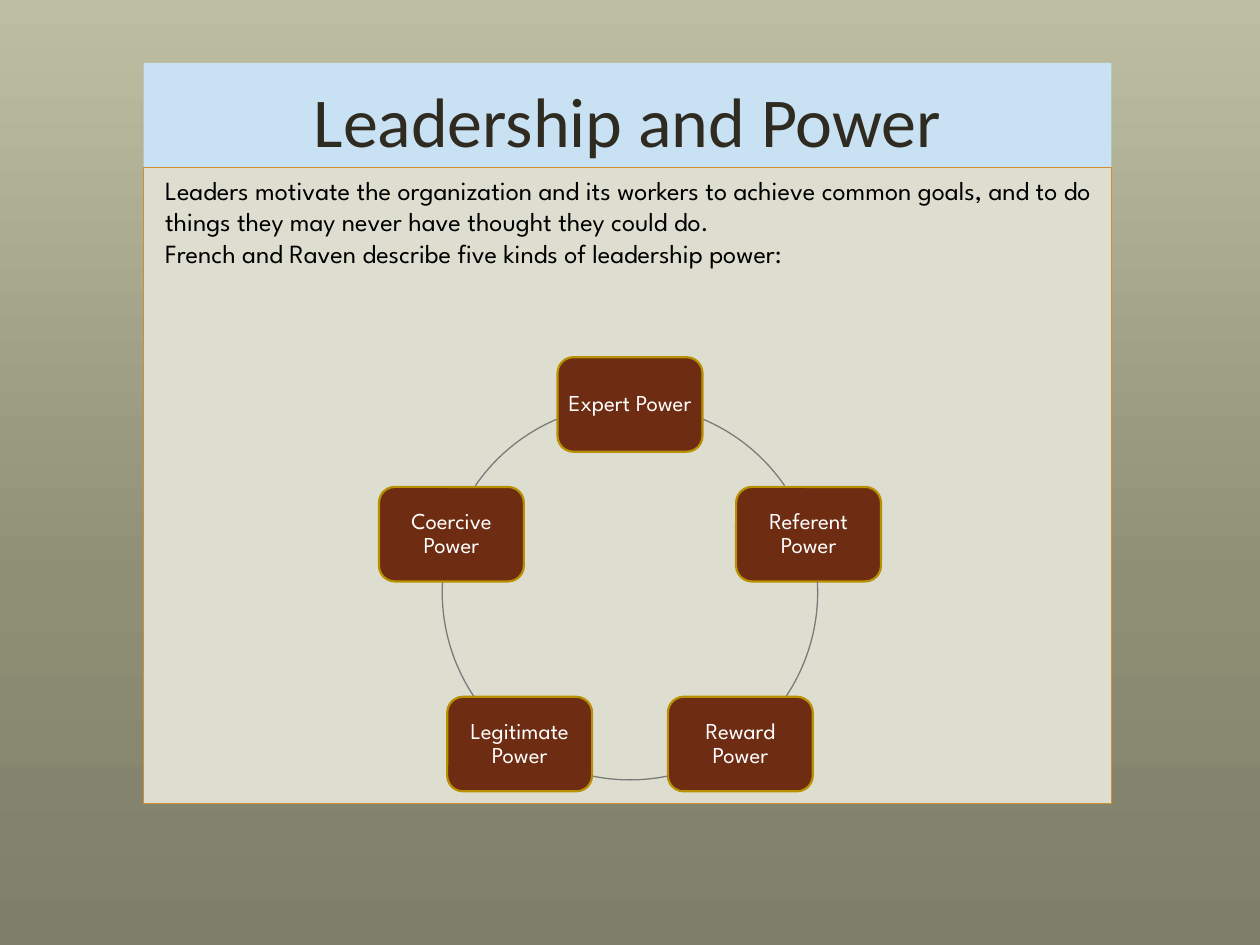
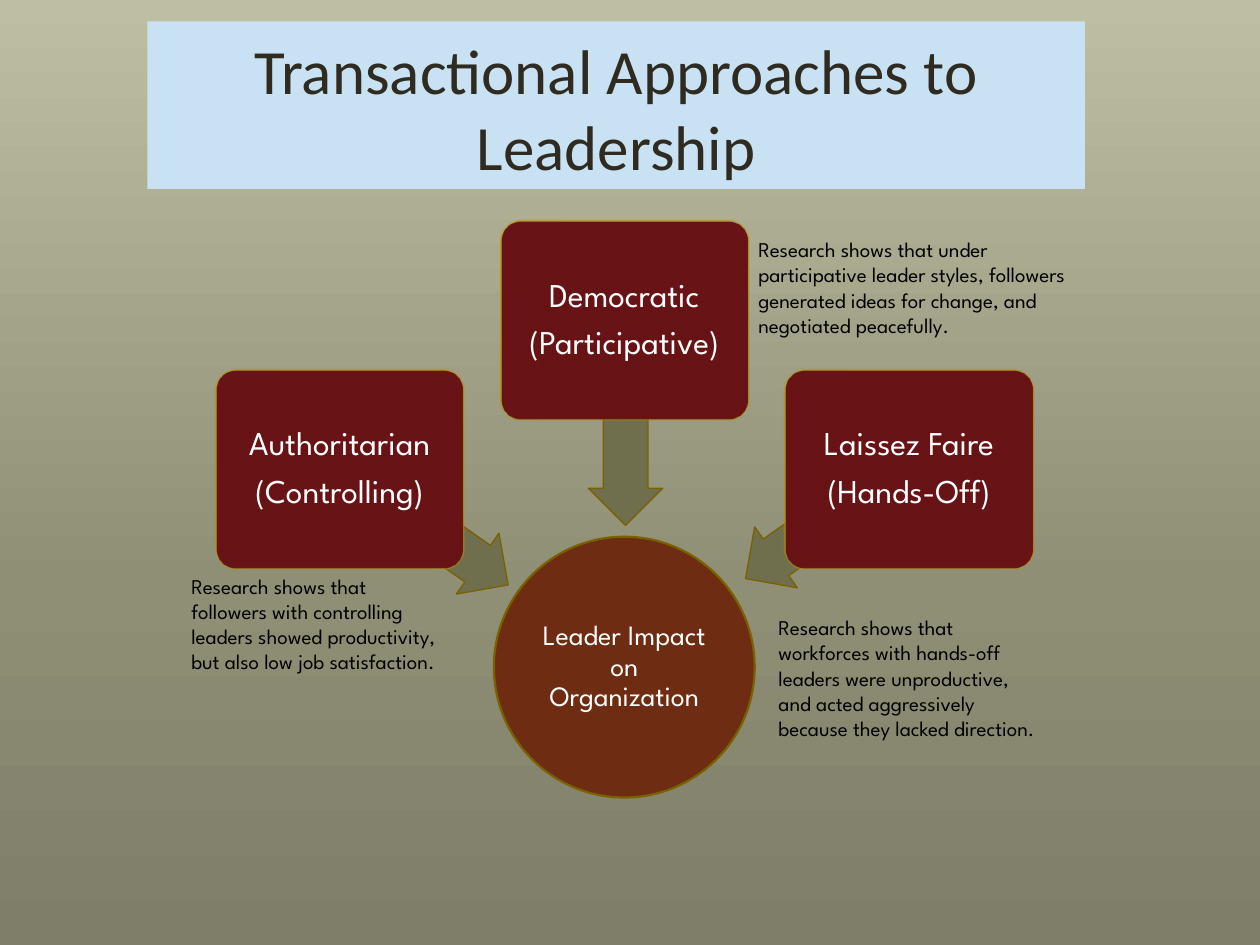
import copy
import math
import pptx
import pptx.util
import pptx.dml.color
import pptx.enum.shapes
import pptx.enum.text
import pptx.oxml
import pptx.oxml.ns

Inches = pptx.util.Inches
Pt = pptx.util.Pt
RGBColor = pptx.dml.color.RGBColor
SHAPE = pptx.enum.shapes.MSO_SHAPE
ANCHOR = pptx.enum.text.MSO_ANCHOR
ALIGN = pptx.enum.text.PP_ALIGN

SKY = RGBColor(0xC8, 0xE1, 0xF3)
INK = RGBColor(0x2F, 0x2B, 0x20)
PAPER = RGBColor(0xDE, 0xDE, 0xD0)
AMBER = RGBColor(0xCF, 0x8F, 0x31)
RUST = RGBColor(0x6E, 0x2C, 0x12)
WINE = RGBColor(0x68, 0x14, 0x17)
GOLD = RGBColor(0xB8, 0x91, 0x01)
BRONZE = RGBColor(0x7A, 0x61, 0x00)
OLIVE = RGBColor(0x6F, 0x6F, 0x4E)
GREY = RGBColor(0x7A, 0x7A, 0x7A)
WHITE = RGBColor(0xFF, 0xFF, 0xFF)
BLACK = RGBColor(0x00, 0x00, 0x00)
STOPS = [
    (0, RGBColor(0xBE, 0xBE, 0xA2)),
    (0.62, RGBColor(0x8F, 0x8F, 0x76)),
    (1, RGBColor(0x7E, 0x7E, 0x69)),
]
HEAD = "Calibri"
BODY = "League Spartan"


def draw(slide, kind, area, fill=None, line=None, width=0.75):
    shape = slide.shapes.add_shape(kind, *map(Inches, area))
    shape.shadow.inherit = False
    if fill is None:
        shape.fill.background()
    else:
        shape.fill.solid()
        shape.fill.fore_color.rgb = fill
    if line is None:
        shape.line.fill.background()
    else:
        shape.line.color.rgb = line
        shape.line.width = Pt(width)
    return shape


def write(shape, lines, size, color, font=BODY, inset=None,
          align=ALIGN.CENTER, anchor=ANCHOR.MIDDLE):
    frame = shape.text_frame
    frame.word_wrap = True
    frame.vertical_anchor = anchor
    frame.text = "\n".join(lines)
    if inset is not None:
        frame.margin_left = frame.margin_right = Inches(inset)
        frame.margin_top = frame.margin_bottom = Inches(inset)
    for para in frame.paragraphs:
        para.alignment = align
        para.font.name = font
        para.font.size = Pt(size)
        para.font.color.rgb = color
        if inset is not None:
            para.line_spacing = 0.9
            para.space_after = Pt(round(size * 0.35, 1))
    return frame


deck = pptx.Presentation()
deck.slide_width = Inches(10)
deck.slide_height = Inches(7.5)

TITLES = [
    ("Leadership and Power", 40, (1.14, 0.5, 7.68, 0.83)),
    ("Transactional Approaches to Leadership", 36, (1.17, 0.17, 7.44, 1.33)),
]
slides = []
for title, size, area in TITLES:
    slide = deck.slides.add_slide(deck.slide_layouts[6])
    back = slide.background.fill
    back.gradient()
    back.gradient_angle = 270
    stop_list = slide.element.xpath(".//a:gsLst")[0]
    stop_list.append(copy.deepcopy(stop_list[-1]))
    for stop, (place, color) in zip(back.gradient_stops, STOPS):
        stop.position = place
        stop.color.rgb = color
    band = draw(slide, SHAPE.RECTANGLE, area, SKY)
    write(band, [title], size, INK, HEAD, anchor=ANCHOR.BOTTOM)
    slides.append(slide)
power, styles = slides

panel = draw(power, SHAPE.RECTANGLE, (1.14, 1.33, 7.68, 5.05), PAPER, AMBER)
frame = write(panel, [
    "Leaders motivate the organization and its workers to achieve common goals, "
    "and to do things they may never have thought they could do.",
    "French and Raven describe five kinds of leadership power:",
], 15, BLACK, align=ALIGN.LEFT, anchor=ANCHOR.TOP)
frame.margin_left = Inches(0.17)
frame.paragraphs[0].space_before = Pt(3)

MID_X, MID_Y, RADIUS = 5, 4.7, 1.49
BOX_W, BOX_H = 1.15, 0.75
ring = (MID_X - RADIUS, MID_Y - RADIUS, 2 * RADIUS, 2 * RADIUS)
KINDS = ["Expert", "Referent", "Reward", "Legitimate", "Coercive"]
ARCS = [(293, 325.5), (356.7, 33.6), (78.4, 101.6), (146.4, 183.3), (214.5, 247)]
for step, (kind, ends) in enumerate(zip(KINDS, ARCS)):
    turn = math.radians(72 * step - 90)
    left = MID_X + RADIUS * math.cos(turn) - BOX_W / 2
    top = MID_Y + RADIUS * math.sin(turn) - BOX_H / 2
    box = draw(power, SHAPE.ROUNDED_RECTANGLE, (left, top, BOX_W, BOX_H),
               RUST, GOLD, 1.25)
    write(box, [kind + " Power"], 13, WHITE, inset=0.05)
    arc = draw(power, SHAPE.ARC, ring, None, GREY)
    for end, angle in enumerate(ends):
        arc.adjustments[end] = angle * 0.6

hub = draw(styles, SHAPE.OVAL, (3.92, 4.26, 2.07, 2.07), RUST, BRONZE, 1.25)
write(hub, ["Leader Impact on Organization"], 16, WHITE, inset=0.01)

STYLES = [
    ("Authoritarian", "(Controlling)", 1.71, 2.93, (2.55, 3.88), 215),
    ("Democratic", "(Participative)", 3.97, 1.75, (4.15, 3.06), 270),
    ("Laissez Faire", "(Hands-Off)", 6.23, 2.93, (5.77, 3.83), 325),
]
for name, trait, left, top, spot, turn in STYLES:
    arrow = draw(styles, SHAPE.LEFT_ARROW, (*spot, 1.63, 0.59), OLIVE, BRONZE)
    arrow.adjustments[0] = 0.6
    arrow.rotation = turn
    box = draw(styles, SHAPE.ROUNDED_RECTANGLE, (left, top, 1.97, 1.58),
               WINE, GOLD, 1.25)
    box.adjustments[0] = 0.1
    effects = box.element.spPr.find(pptx.oxml.ns.qn("a:effectLst"))
    effects.append(pptx.oxml.parse_xml(
        f'<a:softEdge {pptx.oxml.ns.nsdecls("a")} rad="12700"/>'))
    write(box, [name, trait], 19, WHITE, inset=0.04)

NOTES = [
    ("followers with controlling leaders showed productivity, "
     "but also low job satisfaction.", (1.42, 4.5, 2.17, 1.11)),
    ("under participative leader styles, followers generated ideas "
     "for change, and negotiated peacefully.", (5.92, 1.83, 2.67, 1.11)),
    ("workforces with hands-off leaders were unproductive, and acted "
     "aggressively because they lacked direction.", (6.08, 4.83, 2.25, 1.51)),
]
for finding, area in NOTES:
    note = styles.shapes.add_textbox(*map(Inches, area))
    write(note, ["Research shows that " + finding], 12, BLACK,
          align=ALIGN.LEFT, anchor=ANCHOR.TOP)

deck.save("out.pptx")
